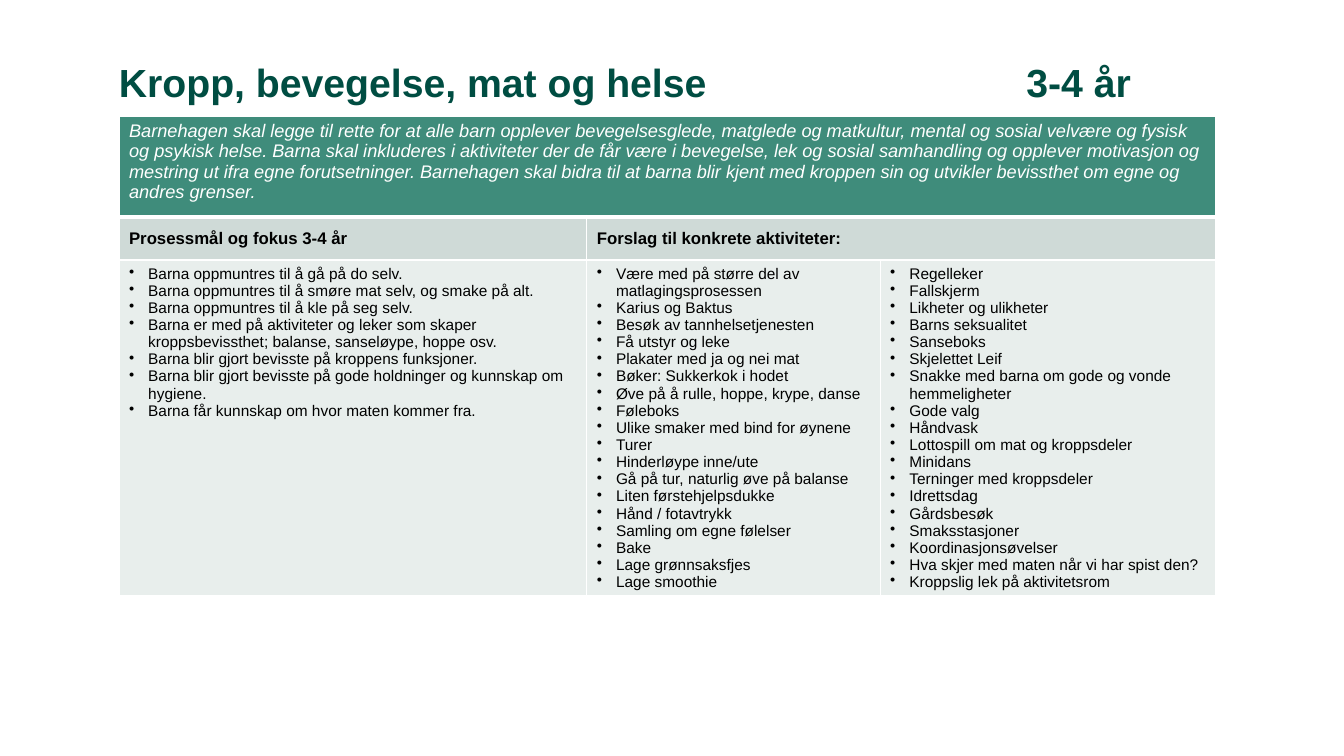
from lxml import etree
from pptx import Presentation
from pptx.dml.color import RGBColor
from pptx.enum.text import MSO_ANCHOR, MSO_AUTO_SIZE, PP_ALIGN
from pptx.oxml.ns import qn
from pptx.util import Inches, Pt

LEFT = PP_ALIGN.LEFT
TOP = MSO_ANCHOR.TOP
MIDDLE = MSO_ANCHOR.MIDDLE
NO_FIT = MSO_AUTO_SIZE.NONE

WIDTHS = (4.64, 2.91, 3.33)
HEIGHTS = (1, 0.43, 3.05)
FILLS = ("3F8C7B", "CFDAD7", "E8EEEC")
RULES = {"lnL": (1, 1, 1), "lnR": (1, 1, 1), "lnT": (1, 3, 1), "lnB": (3, 1, 1)}

HEAD = {"size": Pt(28), "bold": True, "italic": False}
INTRO = {"size": Pt(13), "bold": False, "italic": True}
LABEL = {"size": Pt(12), "bold": True, "italic": False}
BODY = {"size": Pt(11), "bold": False, "italic": False}

AIM = (
    "Barnehagen skal legge til rette for at alle barn opplever bevegelsesglede, "
    "matglede og matkultur, mental og sosial velvære og fysisk og psykisk helse. "
    "Barna skal inkluderes i aktiviteter der de får være i bevegelse, lek og sosial "
    "samhandling og opplever motivasjon og mestring ut ifra egne forutsetninger. "
    "Barnehagen skal bidra til at barna blir kjent med kroppen sin og utvikler "
    "bevissthet om egne og andres grenser."
)
LABELS = ("Prosessmål og fokus 3-4 år", "Forslag til konkrete aktiviteter:")
GOALS = (
    "Barna oppmuntres til å gå på do selv.",
    "Barna oppmuntres til å smøre mat selv, og smake på alt.",
    "Barna oppmuntres til å kle på seg selv.",
    "Barna er med på aktiviteter og leker som skaper kroppsbevissthet; "
    "balanse, sanseløype, hoppe osv.",
    "Barna blir gjort bevisste på kroppens funksjoner.",
    "Barna blir gjort bevisste på gode holdninger og kunnskap om hygiene.",
    "Barna får kunnskap om hvor maten kommer fra.",
)
TASKS = (
    "Være med på større del av matlagingsprosessen",
    "Karius og Baktus",
    "Besøk av tannhelsetjenesten",
    "Få utstyr og leke",
    "Plakater med ja og nei mat",
    "Bøker: Sukkerkok i hodet",
    "Øve på å rulle, hoppe, krype, danse",
    "Føleboks",
    "Ulike smaker med bind for øynene",
    "Turer",
    "Hinderløype inne/ute",
    "Gå på tur, naturlig øve på balanse",
    "Liten førstehjelpsdukke",
    "Hånd / fotavtrykk",
    "Samling om egne følelser",
    "Bake",
    "Lage grønnsaksfjes",
    "Lage smoothie",
)
GAMES = (
    "Regelleker",
    "Fallskjerm",
    "Likheter og ulikheter",
    "Barns seksualitet",
    "Sanseboks",
    "Skjelettet Leif",
    "Snakke med barna om gode og vonde hemmeligheter",
    "Gode valg",
    "Håndvask",
    "Lottospill om mat og kroppsdeler",
    "Minidans",
    "Terninger med kroppsdeler",
    "Idrettsdag",
    "Gårdsbesøk",
    "Smaksstasjoner",
    "Koordinasjonsøvelser",
    "Hva skjer med maten når vi har spist den?",
    "Kroppslig lek på aktivitetsrom",
)


def color(code):
    """Turn a hex string into a colour."""
    return RGBColor.from_string(code)


def write(para, text, style, ink):
    """Add one formatted run to a paragraph."""
    run = para.add_run()
    run.text = text
    run.font.name = "Arial"
    run.font.color.rgb = color(ink)
    for name, value in style.items():
        setattr(run.font, name, value)


def bullet(para):
    """Give a paragraph a hanging bullet."""
    props = para._p.get_or_add_pPr()
    props.set("marL", str(Inches(0.19)))
    props.set("indent", str(-Inches(0.19)))
    etree.SubElement(props, qn("a:buChar"), char="•")


def add_list(cell, items):
    """Fill a cell with bulleted lines."""
    frame = cell.text_frame
    for i, item in enumerate(items):
        para = frame.add_paragraph() if i else frame.paragraphs[0]
        bullet(para)
        write(para, item, BODY, "000000")


def add_rules(cell, row):
    """Draw the white borders of a cell."""
    props = cell._tc.get_or_add_tcPr()
    for i, (tag, sizes) in enumerate(RULES.items()):
        line = etree.Element(qn(f"a:{tag}"), w=str(Pt(sizes[row])))
        fill = etree.SubElement(line, qn("a:solidFill"))
        etree.SubElement(fill, qn("a:srgbClr"), val="FFFFFF")
        props.insert(i, line)


def add_title(slide):
    """Place the title with the age group at a tab stop."""
    title = slide.shapes.title
    title.left, title.top = Inches(1.18), Inches(0.54)
    title.width, title.height = Inches(11.5), Inches(0.61)
    frame = title.text_frame
    layout = {"auto_size": NO_FIT, "word_wrap": True, "vertical_anchor": MIDDLE,
              "margin_left": 0, "margin_right": 0, "margin_top": 0, "margin_bottom": 0}
    for name, value in layout.items():
        setattr(frame, name, value)
    para = frame.paragraphs[0]
    para.alignment = LEFT
    para.line_spacing = 0.9
    tabs = etree.SubElement(para._p.get_or_add_pPr(), qn("a:tabLst"))
    etree.SubElement(tabs, qn("a:tab"), pos=str(Inches(9)), algn="l")
    write(para, "Kropp, bevegelse, mat og helse\t3-4 år", HEAD, "004D42")


def add_grid(slide):
    """Build the empty table with its fills, borders and merges."""
    table = slide.shapes.add_table(
        len(HEIGHTS), len(WIDTHS), Inches(1.18), Inches(1.15),
        Inches(sum(WIDTHS)), Inches(sum(HEIGHTS))).table
    table.first_row = table.horz_banding = False
    for col, width in zip(table.columns, WIDTHS):
        col.width = Inches(width)
    for i, (row, height) in enumerate(zip(table.rows, HEIGHTS)):
        row.height = Inches(height)
        for cell in row.cells:
            cell.fill.solid()
            cell.fill.fore_color.rgb = color(FILLS[i])
            cell.vertical_anchor = MIDDLE if i == 1 else TOP
            add_rules(cell, i)
    table.cell(0, 0).merge(table.cell(0, 2))
    table.cell(1, 1).merge(table.cell(1, 2))
    return table


def main():
    """Build and save the slide."""
    deck = Presentation()
    deck.slide_width, deck.slide_height = Inches(13.33), Inches(7.5)
    slide = deck.slides.add_slide(deck.slide_layouts[5])
    add_title(slide)
    table = add_grid(slide)
    write(table.cell(0, 0).text_frame.paragraphs[0], AIM, INTRO, "FFFFFF")
    for i, label in enumerate(LABELS):
        write(table.cell(1, i).text_frame.paragraphs[0], label, LABEL, "000000")
    for i, items in enumerate((GOALS, TASKS, GAMES)):
        add_list(table.cell(2, i), items)
    deck.save("out.pptx")


if __name__ == "__main__":
    main()
